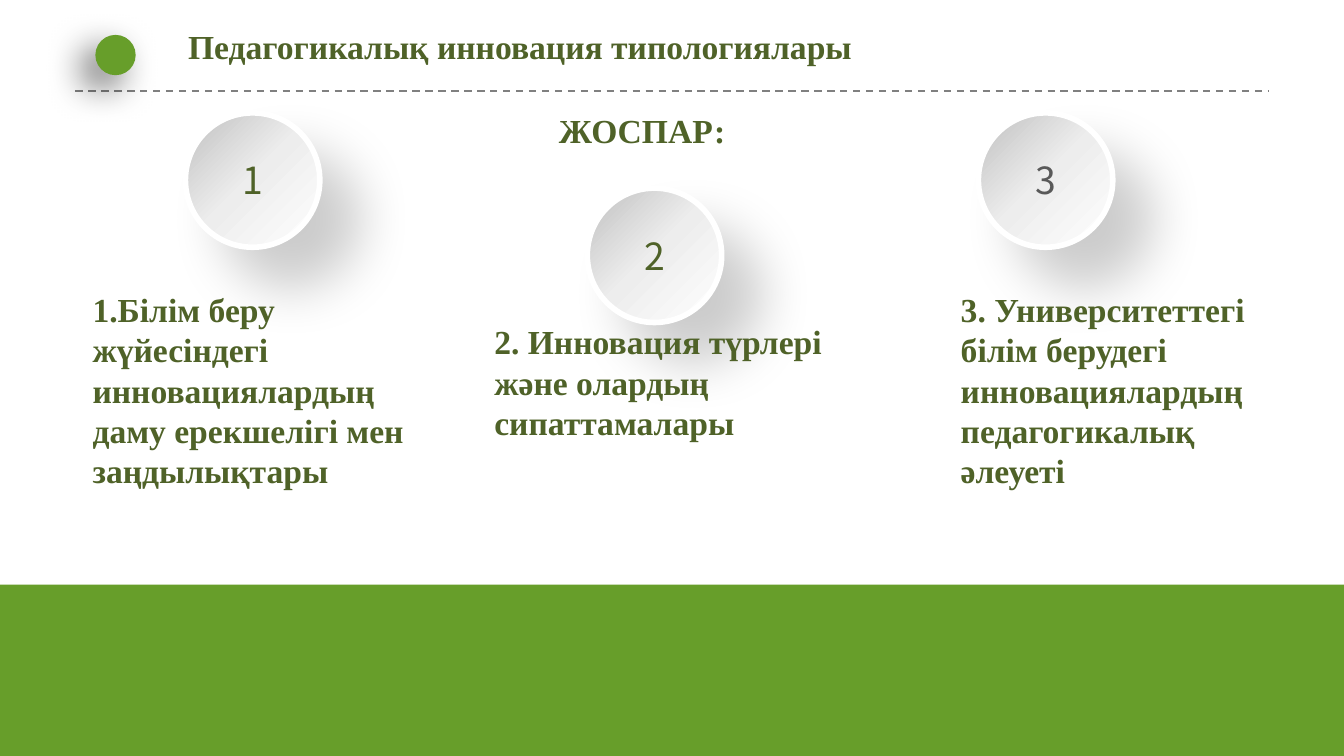
import pptx
import pptx.util
import pptx.dml.color
import pptx.enum.dml
import pptx.enum.shapes
import pptx.enum.text
import pptx.oxml.ns
from lxml import etree
from pptx.util import Inches, Pt

WIDE = 10
HIGH = WIDE * 9 / 16
GREEN, DARK, GREY = "679E2A", "4F6228", "595959"
SERIF, SANS = "Times New Roman", "Noto Sans CJK SC"
STOPS = [(0, "C0C0C0"), (49, "EDEDED"), (100, "FFFFFF")]
BALL = 1
BAND = 4.35

TITLE = ("Педагогикалық инновация типологиялары", (1.3, 0.14, 5.19, 0.71))
PLAN = ("ЖОСПАР:", (4.06, 0.77, 1.45, 0.4))
# number, number colour, ball left and top, text, text box
ITEMS = [
    ("1", DARK, (1.38, 0.84),
     "1.Білім беру жүйесіндегі инновациялардың даму ерекшелігі мен заңдылықтары",
     (0.59, 2.1, 2.68, 1.92)),
    ("2", DARK, (4.37, 1.4),
     "2. Инновация түрлері және олардың сипаттамалары",
     (3.58, 2.34, 2.8, 1.31)),
    ("3", GREY, (7.28, 0.84),
     "3. Университеттегі білім берудегі инновациялардың педагогикалық әлеуеті",
     (7.05, 2.1, 2.52, 1.62)),
]


def color(code):
    return pptx.dml.color.RGBColor.from_string(code)


def add(parent, tag, **attrs):
    """Append a DrawingML element, with its values as attributes."""
    node = etree.SubElement(parent, pptx.oxml.ns.qn("a:" + tag))
    for key, value in attrs.items():
        node.set(key, str(value))
    return node


def shade(shape, alpha, blur, dist, angle):
    """Give the shape a black outer shadow; blur and dist are in points."""
    effects = shape._element.spPr.find(pptx.oxml.ns.qn("a:effectLst"))
    outer = add(effects, "outerShdw", blurRad=Pt(blur), dist=Pt(dist),
                dir=angle * 60000, algn="ctr", rotWithShape=0)
    add(add(outer, "srgbClr", val="000000"), "alpha", val=alpha * 1000)


def draw(kind, box):
    shape = slide.shapes.add_shape(kind, *map(Inches, box))
    shape.shadow.inherit = False
    shape.fill.solid()
    shape.fill.fore_color.rgb = color(GREEN)
    shape.line.fill.background()
    return shape


def style(para, size, face, code, bold=False):
    para.font.size, para.font.name, para.font.bold = Pt(size), face, bold
    para.font.color.rgb = color(code)


def write(shape, text, wrap):
    """Fill a text shape with one bold green paragraph."""
    frame = shape.text_frame
    frame.text = text
    frame.word_wrap = wrap
    frame.auto_size = pptx.enum.text.MSO_AUTO_SIZE.NONE
    frame.vertical_anchor = pptx.enum.text.MSO_ANCHOR.TOP
    para = frame.paragraphs[0]
    para.alignment = pptx.enum.text.PP_ALIGN.LEFT
    style(para, 18, SERIF, DARK, True)


def label(text, box, wrap=True):
    write(slide.shapes.add_textbox(*map(Inches, box)), text, wrap)


def add_ball(text, code, spot):
    ball = draw(OVAL, (*spot, BALL, BALL))
    ball.fill.gradient()
    ball.fill.gradient_angle = 315
    stops = ball._element.spPr.find(".//" + pptx.oxml.ns.qn("a:gsLst"))
    stops.clear()
    for pos, tone in STOPS:
        add(add(stops, "gs", pos=pos * 1000), "srgbClr", val=tone)
    ball.line.color.rgb = color("FFFFFF")
    ball.line.width = Pt(3)
    shade(ball, 20, 29, 29, 45)
    frame = ball.text_frame
    frame.margin_left = frame.margin_right = 0
    frame.margin_top = frame.margin_bottom = Inches(0.04)
    frame.vertical_anchor = pptx.enum.text.MSO_ANCHOR.MIDDLE
    frame.text = text
    para = frame.paragraphs[0]
    para.alignment = pptx.enum.text.PP_ALIGN.CENTER
    style(para, 20, SANS, code)


OVAL = pptx.enum.shapes.MSO_SHAPE.OVAL
deck = pptx.Presentation()
deck.slide_width, deck.slide_height = Inches(WIDE), Inches(HIGH)
slide = deck.slides.add_slide(deck.slide_layouts[5])

title = slide.shapes.title
title.left, title.top, title.width, title.height = map(Inches, TITLE[1])
write(title, TITLE[0], False)

rule = slide.shapes.add_connector(
    pptx.enum.shapes.MSO_CONNECTOR.STRAIGHT,
    *map(Inches, (0.56, 0.68, 9.44, 0.68)))
rule.line.color.rgb = color("808080")
rule.line.width = Pt(1)
rule.line.dash_style = pptx.enum.dml.MSO_LINE.DASH
add(rule._element.spPr, "effectLst")

dot = draw(OVAL, (0.71, 0.26, 0.3, 0.3))
shade(dot, 60, 20, 10, 135)
draw(pptx.enum.shapes.MSO_SHAPE.RECTANGLE, (0, BAND, WIDE, HIGH - BAND))

for number, code, spot, text, box in ITEMS:
    add_ball(number, code, spot)
for number, code, spot, text, box in ITEMS:
    label(text, box)
label(*PLAN, wrap=False)

deck.save("out.pptx")
